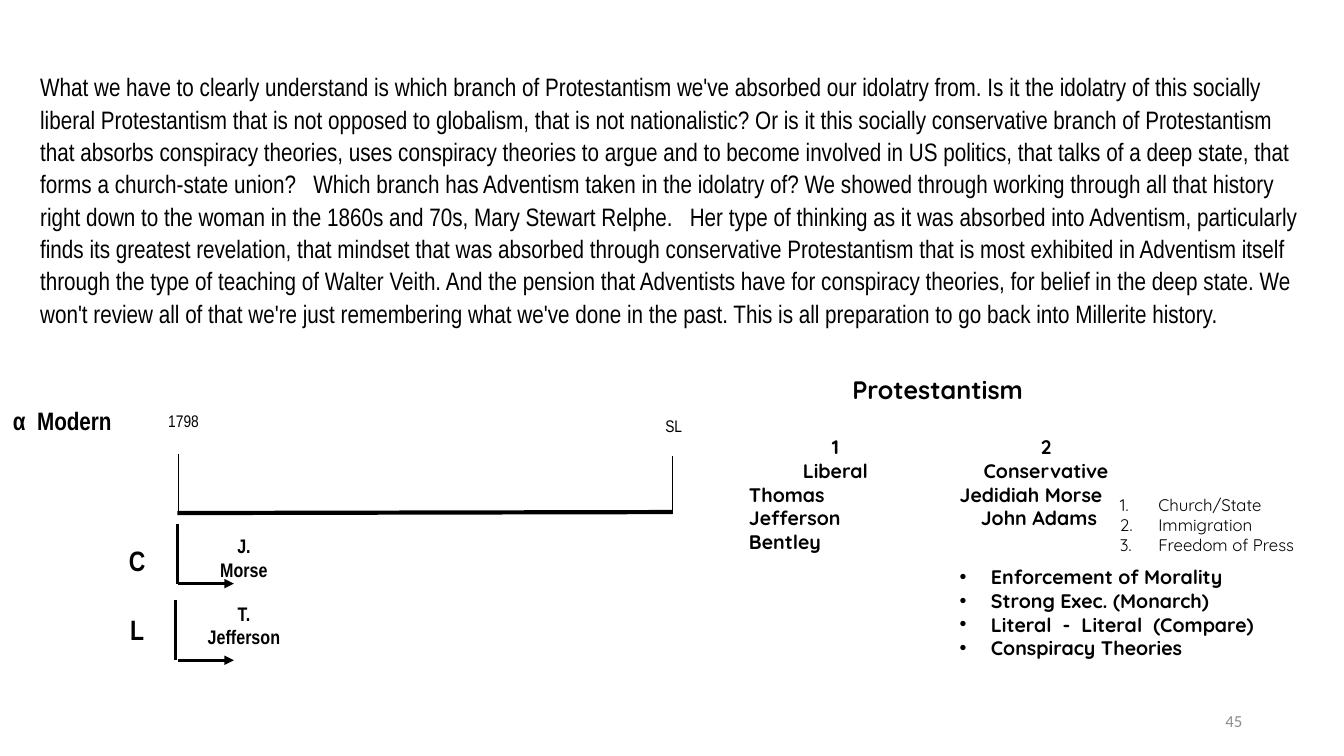
from lxml import etree
from pptx import Presentation
from pptx.dml.color import RGBColor
from pptx.enum.shapes import MSO_CONNECTOR as Connector
from pptx.enum.text import MSO_ANCHOR as Anchor, PP_ALIGN as Align
from pptx.oxml.ns import qn
from pptx.util import Inches, Pt

BLACK = RGBColor(0, 0, 0)
GRAY = RGBColor(0x8C, 0x8C, 0x8C)
NARROW, ROUND, PLAIN = "Arial Narrow", "Quicksand", "Calibri"

BODY = [
    "What we have to clearly understand is which branch of Protestantism we've absorbed our "
    "idolatry from.",
    "Is it the idolatry of this socially liberal Protestantism that is not opposed to globalism, "
    "that is not nationalistic?",
    "Or is it this socially conservative branch of Protestantism that absorbs conspiracy theories, "
    "uses conspiracy theories to argue and to become involved in US politics, that talks of a deep "
    "state, that forms a church-state union?  ",
    "Which branch has Adventism taken in the idolatry of?",
    "We showed through working through all that history right down to the woman in the 1860s and "
    "70s, Mary Stewart Relphe.  ",
    "Her type of thinking as it was absorbed into Adventism, particularly finds its greatest "
    "revelation, that mindset that was absorbed through conservative Protestantism that is most "
    "exhibited in Adventism itself through the type of teaching of Walter Veith.",
    "And the pension that Adventists have for conspiracy theories, for belief in the deep state.",
    "We won't review all of that we're just remembering what we've done in the past.",
    "This is all preparation to go back into Millerite history.",
]
DATES = [("1798", 1.57, 4.03, 0.75), ("SL", 6.5, 4.08, 0.56)]
TIMELINE = [
    ((1.76, 5.09), (6.67, 5.08), 3),
    ((1.77, 4.5), (1.77, 5.08), 0.75),
    ((6.67, 4.52), (6.67, 5.1), 0.75),
]
ROWS = [
    ("C", 5.34, ["J.", "Morse"], 5.25, 1.76, 5.2, 5.79),
    ("L", 6.03, ["T.", "Jefferson"], 5.92, 1.74, 5.95, 6.55),
]
BRANCHES = [
    (7.33, ["1", "Liberal"], [("Thomas Jefferson", 0), ("Bentley", 0)]),
    (9.42, ["2", "Conservative"], [("Jedidiah Morse", 0), ("John Adams", 0.21)]),
]
ISSUES = ["Church/State", "Immigration", "Freedom of Press"]
TRAITS = ["Enforcement of Morality", "Strong Exec. (Monarch)",
          "Literal  -  Literal  (Compare)", "Conspiracy Theories"]


def add_para(frame, text, size, font, bold=False, color=BLACK, align=Align.LEFT, spacing=1.0):
    first = frame.paragraphs[0]
    para = frame.add_paragraph() if first.runs else first
    para.alignment, para.line_spacing = align, spacing
    span = para.add_run()
    span.text = text
    for name, value in {"size": Pt(size), "name": font, "bold": bold}.items():
        setattr(span.font, name, value)
    span.font.color.rgb = color
    return para


def add_box(place, lines, size, font, anchor=Anchor.TOP, **style):
    box = page.shapes.add_textbox(*map(Inches, place))
    frame = box.text_frame
    frame.word_wrap, frame.vertical_anchor = True, anchor
    for text in lines:
        add_para(frame, text, size, font, **style)
    return frame


def set_indent(para, left, hanging=0):
    props = para._p.get_or_add_pPr()
    props.set("marL", str(Inches(left)))
    props.set("indent", str(-Inches(hanging)))
    return props


def add_bullets(frame, indent, tag, **marks):
    for para in frame.paragraphs:
        props = set_indent(para, indent, indent)
        if tag == "a:buChar":
            etree.SubElement(props, qn("a:buFont"), typeface="Arial")
        etree.SubElement(props, qn(tag), **marks)


def add_line(start, end, width, arrow=False):
    ends = [Inches(value) for value in (*start, *end)]
    line = page.shapes.add_connector(Connector.STRAIGHT, *ends)
    line.line.color.rgb, line.line.width = BLACK, Pt(width)
    if arrow:
        etree.SubElement(line.line._get_or_add_ln(), qn("a:tailEnd"), type="triangle")
    etree.SubElement(line._element.spPr, qn("a:effectLst"))


deck = Presentation()
deck.slide_width, deck.slide_height = Inches(13.33), Inches(7.5)
page = deck.slides.add_slide(deck.slide_layouts[6])

add_box((9.42, 6.95, 3, 0.4), ["45"], 12, PLAIN, Anchor.MIDDLE, color=GRAY, align=Align.RIGHT)
add_box((0.3, 0.64, 12.72, 3), [" ".join(BODY)], 18, NARROW, spacing=1.07)
add_box((0.03, 3.97, 1.43, 0.4), ["α  Modern"], 18, NARROW, bold=True)

for start, end, width in TIMELINE:
    add_line(start, end, width)
for date, left, top, width in DATES:
    add_box((left, top, width, 0.3), [date], 12, NARROW)

for letter, letter_top, person, person_top, stem, top, bottom in ROWS:
    add_line((stem, top), (stem, bottom), 2.25)
    add_line((1.77, bottom), (2.32, bottom), 2.25, arrow=True)
    centered = {"bold": True, "align": Align.CENTER}
    add_box((1, letter_top, 0.72, 0.44), [letter], 20, NARROW, **centered)
    add_box((1.95, person_top, 0.94, 0.57), person, 14, NARROW, **centered)

add_box((6.78, 3.66, 5.04, 0.4), ["Protestantism"], 18, ROUND, bold=True, align=Align.CENTER)
for left, heading, people in BRANCHES:
    frame = add_box((left, 4.27, 1.91, 1.04), heading, 14, ROUND, bold=True, align=Align.CENTER)
    for person, indent in people:
        set_indent(add_para(frame, person, 14, ROUND, bold=True), indent)

issues = add_box((11.01, 4.86, 2.32, 0.71), ISSUES, 12, ROUND)
add_bullets(issues, 0.38, "a:buAutoNum", type="arabicPeriod")
traits = add_box((9.42, 5.56, 3.61, 1.04), TRAITS, 14, ROUND, bold=True)
add_bullets(traits, 0.31, "a:buChar", char="•")

deck.save("out.pptx")
